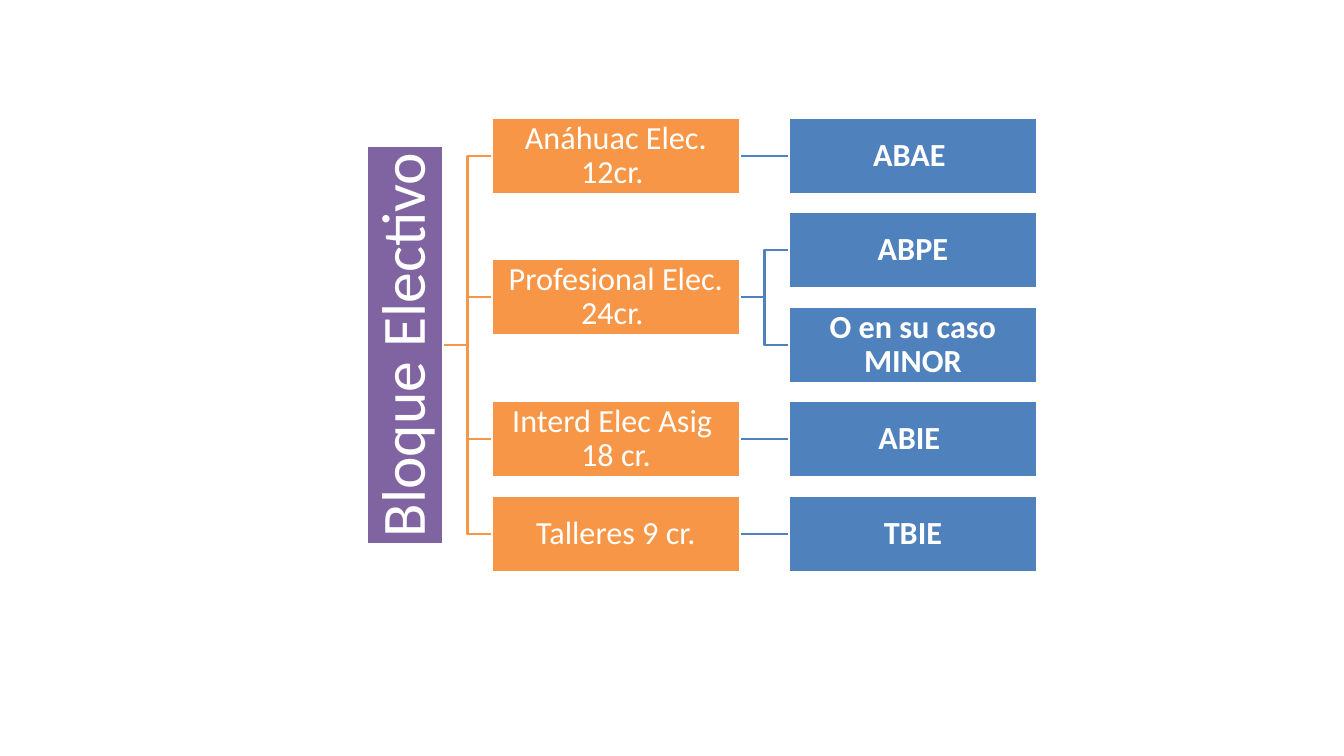
from lxml import etree
from pptx import Presentation
from pptx import util as u
from pptx.dml.color import RGBColor
from pptx.enum import shapes, text
from pptx.oxml.ns import qn

SCALE = 914400 / 100.8
HUES = {"root": "8064A2", "group": "F79646", "code": "4F81BD", "white": "FFFFFF"}
WIDE, HIGH = 248, 76
TOP = 118
PITCH = 94.5
GROUP_X, CODE_X = 492, 789
ROOT_X, ROOT_Y, ROOT_LEN = 405, 345, 398
TREE = [
    ("Anáhuac Elec. 12cr. ", ["ABAE "]),
    ("Profesional Elec. 24cr. ", ["ABPE", "O en su caso MINOR"]),
    ("Interd Elec Asig  18 cr.", ["ABIE "]),
    ("Talleres 9 cr.", ["TBIE"]),
]


def px(n):
    return u.Emu(round(n * SCALE))


def hue(name):
    return RGBColor.from_string(HUES[name])


def add_box(slide, words, kind, x, y, w=WIDE, size=23, inset=2):
    box = slide.shapes.add_shape(
        shapes.MSO_SHAPE.RECTANGLE, px(x), px(y), px(w), px(HIGH))
    box.shadow.inherit = False
    box.fill.solid()
    box.fill.fore_color.rgb = hue(kind)
    box.line.color.rgb = hue("white")
    box.line.width = u.Pt(2)
    frame = box.text_frame
    frame.text = words
    frame.word_wrap = True
    frame.vertical_anchor = text.MSO_ANCHOR.MIDDLE
    frame.margin_left = frame.margin_right = px(inset)
    frame.margin_top = frame.margin_bottom = px(inset)
    para = frame.paragraphs[0]
    para.alignment = text.PP_ALIGN.CENTER
    para.line_spacing = 0.9
    font = para.runs[0].font
    font.name = "Calibri"
    font.size = u.Pt(size)
    font.bold = kind == "code"
    font.color.rgb = hue("white")
    return box


def add_link(slide, style, kind, start, end):
    link = slide.shapes.add_connector(style, *map(px, start + end))
    link.line.color.rgb = hue(kind)
    link.line.width = u.Pt(2)
    etree.SubElement(link._element.spPr, qn("a:effectLst"))
    slide.shapes._spTree.insert(2, link._element)
    return link


def add_group(slide, words, codes, row):
    tops = [int(TOP + PITCH * (row + i)) for i in range(len(codes))]
    y = sum(tops) // len(tops)
    mid = y + HIGH // 2
    group = add_box(slide, words, "group", GROUP_X, y)
    add_link(slide, shapes.MSO_CONNECTOR.ELBOW, "group",
             (ROOT_X + HIGH // 2, ROOT_Y), (GROUP_X, mid))
    for code, top in zip(codes, tops):
        box = add_box(slide, code, "code", CODE_X, top)
        flat = top == y
        style = shapes.MSO_CONNECTOR.STRAIGHT if flat else shapes.MSO_CONNECTOR.ELBOW
        link = add_link(slide, style, "code",
                        (GROUP_X + WIDE, mid), (CODE_X, top + HIGH // 2))
        if flat:
            link.begin_connect(group, 3)
            link.end_connect(box, 1)


def main():
    deck = Presentation()
    deck.slide_width, deck.slide_height = px(1344), px(756)
    slide = deck.slides.add_slide(deck.slide_layouts[6])
    root = add_box(slide, "Bloque Electivo", "root", ROOT_X - ROOT_LEN // 2,
                   ROOT_Y - HIGH // 2, ROOT_LEN, 44, 3)
    root.rotation = 270
    row = 0
    for words, codes in TREE:
        add_group(slide, words, codes, row)
        row += len(codes)
    deck.save("out.pptx")


if __name__ == "__main__":
    main()
